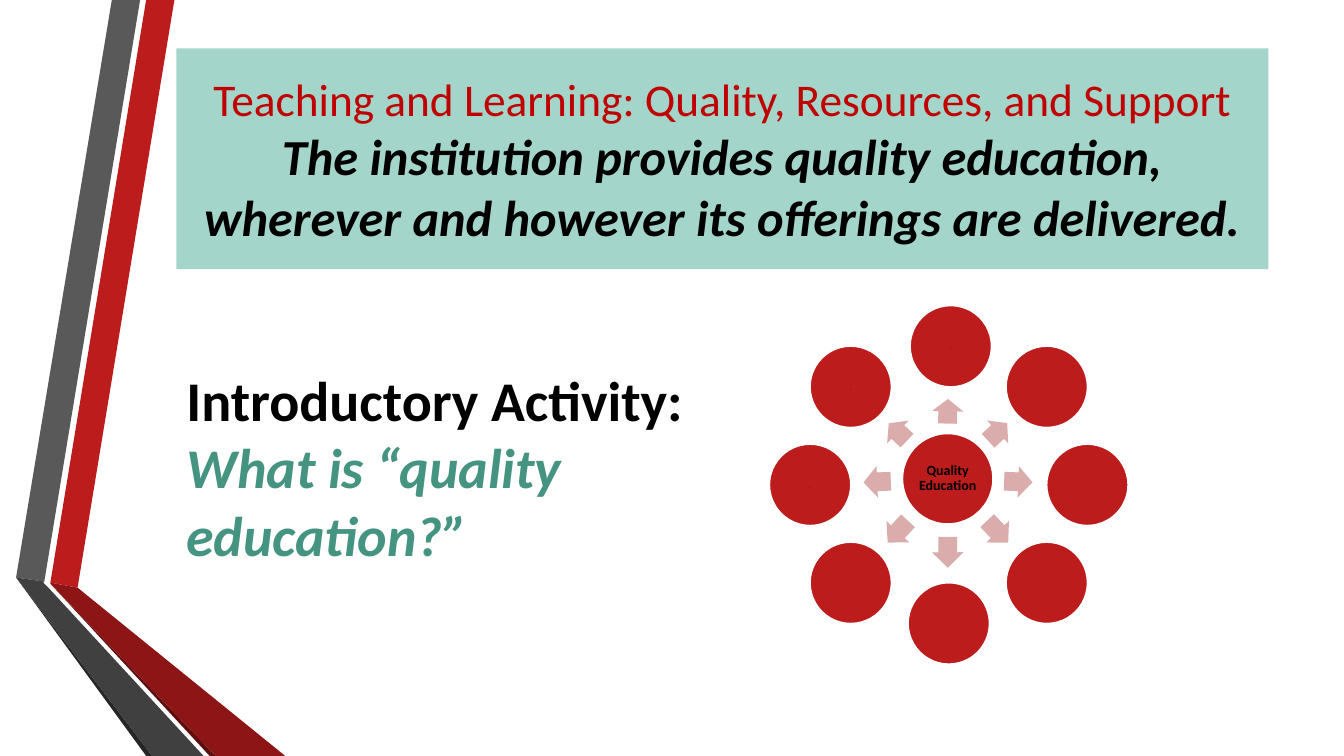
from math import atan2, cos, degrees, hypot, radians, sin

from pptx import Presentation
from pptx.dml.color import RGBColor
from pptx.enum.shapes import MSO_SHAPE
from pptx.enum.text import MSO_ANCHOR, PP_ALIGN
from pptx.util import Pt

PX = 9144
RECT, OVAL, ARROW = MSO_SHAPE.RECTANGLE, MSO_SHAPE.OVAL, MSO_SHAPE.RIGHT_ARROW
LEFT, MID = PP_ALIGN.LEFT, PP_ALIGN.CENTER
TOP, CENTER = MSO_ANCHOR.TOP, MSO_ANCHOR.MIDDLE
RED, PINK, MINT, TEAL = "BC1C1C", "DAACAC", "A4D5CA", "459481"
CRIMSON, BLACK, WHITE = "C00000", "000000", "FFFFFF"

BANDS = [
    (RED, [(50, 578), (77, 583), (173, 0), (145, 0)]),
    ("595959", [(139, 0), (111, 0), (16, 573), (44, 577)]),
    ("262626", [(16, 573), (145, 750), (151, 750)]),
    ("5E0E0E", [(50, 579), (208, 750), (214, 750)]),
    ("8D1515", [(50, 579), (214, 750), (283, 750), (77, 583), (50, 578)]),
    ("404040", [(202, 750), (48, 583), (43, 578), (44, 577), (16, 573), (151, 750)]),
]


def color(code):
    """Turn a hex string into a colour."""
    return RGBColor.from_string(code)


def emu(*sizes):
    """Turn px lengths into EMU."""
    return [round(size * PX) for size in sizes]


def paint(shape, fill, edge=None):
    """Give a shape a flat fill and an optional edge."""
    shape.shadow.inherit = False
    shape.fill.solid()
    shape.fill.fore_color.rgb = color(fill)
    if edge:
        shape.line.color.rgb = color(edge)
        shape.line.width = Pt(1.25)
    else:
        shape.line.fill.background()


def write(shape, lines, align, anchor, inset=(10, 5), space=None):
    """Write lines of (text, size, colour, bold, italic) into a shape."""
    frame = shape.text_frame
    frame.word_wrap = True
    frame.vertical_anchor = anchor
    frame.margin_left = frame.margin_right = inset[0] * PX
    frame.margin_top = frame.margin_bottom = inset[1] * PX
    for i, (text, size, tint, bold, slant) in enumerate(lines):
        para = frame.add_paragraph() if i else frame.paragraphs[0]
        para.alignment = align
        para.line_spacing = space
        run = para.add_run()
        run.text = text
        font = run.font
        font.name, font.size, font.bold, font.italic = "Calibri", Pt(size), bold, slant
        font.color.rgb = color(tint)


def place(shapes, kind, x, y, wide, high):
    """Add a preset shape centred on a point."""
    return shapes.add_shape(kind, *emu(x - wide / 2, y - high / 2, wide, high))


def ribbon(shapes, x, y):
    """Draw the folded ribbon from its top left corner."""
    for fill, spots in BANDS:
        spots = [(x + px, y + py) for px, py in spots]
        build = shapes.build_freeform(*spots[0], scale=PX)
        build.add_line_segments(spots[1:], close=True)
        paint(build.convert_to_shape(), fill)


def title(shapes, x, y, wide, high):
    """Draw the title panel."""
    panel = shapes.add_shape(RECT, *emu(x, y, wide, high))
    paint(panel, MINT)
    write(panel, [
        ("Teaching and Learning: Quality, Resources, and Support", 32.4, CRIMSON, False, False),
        ("The institution provides quality education, wherever and however "
         "its offerings are delivered.", 36, BLACK, True, True),
    ], MID, CENTER)


def prompt(shapes, x, y, wide, high):
    """Write the activity and its question."""
    box = shapes.add_textbox(*emu(x, y, wide, high))
    write(box, [
        ("Introductory Activity:", 40, BLACK, True, False),
        ("What is “quality education?”", 40, TEAL, True, True),
    ], LEFT, TOP)


def wheel(shapes, x, y, wide, high):
    """Draw a hub with eight arrows pointing to a ring of discs."""
    disc, dots = 81, (0, 6, 7)
    mid_x, mid_y = x + wide / 2, y + high / 2
    ring = (wide - disc) / 2
    hub_x, hub_y = mid_x - 1, mid_y - 6
    hub = place(shapes, OVAL, hub_x, hub_y, 90, 90)
    paint(hub, RED, WHITE)
    write(hub, [("Quality Education", 10, BLACK, True, False)], MID, CENTER, (1, 1), 0.9)
    for step in range(8):
        turn = radians(45 * step - 90)
        disc_x = mid_x + ring * cos(turn) + (2 if step == 0 else 0)
        disc_y = mid_y + ring * sin(turn)
        run, rise = disc_x - hub_x, disc_y - hub_y
        length = 0.53 * (hypot(run, rise) - (90 + disc) / 2)
        arrow = place(shapes, ARROW, hub_x + 70 * cos(turn),
                      hub_y + 3 + 70 * sin(turn), length, 31)
        arrow.adjustments[0] = 0.6
        arrow.adjustments[1] = 0.5
        arrow.rotation = degrees(atan2(rise, run)) % 360
        paint(arrow, PINK)
        ball = place(shapes, OVAL, disc_x, disc_y, disc, disc)
        paint(ball, RED, WHITE)
        if step in dots:
            write(ball, [(".", 8, CRIMSON, False, False)], MID, CENTER, (1, 1), 0.9)


def main():
    """Build the slide and save it."""
    deck = Presentation()
    deck.slide_width, deck.slide_height = emu(1333, 750)
    shapes = deck.slides.add_slide(deck.slide_layouts[6]).shapes
    ribbon(shapes, 0, 0)
    title(shapes, 175, 48, 1083, 219)
    wheel(shapes, 763, 303, 356, 356)
    prompt(shapes, 175, 358, 535, 242)
    deck.save("out.pptx")


if __name__ == "__main__":
    main()
